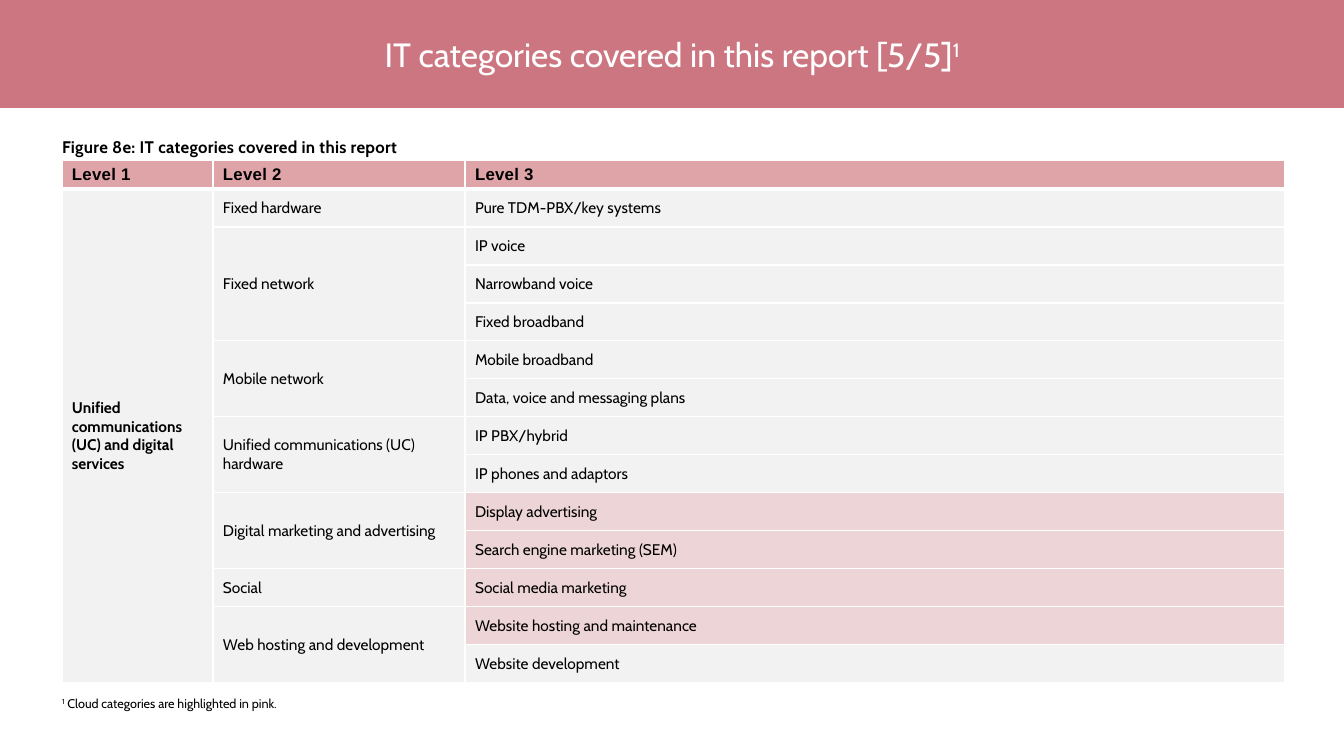
from lxml import etree
from pptx import Presentation
from pptx.dml.color import RGBColor
from pptx.enum.text import MSO_ANCHOR, MSO_AUTO_SIZE, PP_ALIGN
from pptx.oxml.ns import qn
from pptx.util import Inches, Pt

PX = 914400 / 100.8
MIDDLE, TOP = MSO_ANCHOR.MIDDLE, MSO_ANCHOR.TOP
LEFT, CENTER = PP_ALIGN.LEFT, PP_ALIGN.CENTER
NO_FIT = MSO_AUTO_SIZE.NONE

BLACK = RGBColor(0x00, 0x00, 0x00)
WHITE = RGBColor(0xFF, 0xFF, 0xFF)
ROSE = RGBColor(0xCC, 0x76, 0x81)
HEADER_PINK = RGBColor(0xDE, 0xA4, 0xA8)
CLOUD_PINK = RGBColor(0xED, 0xD4, 0xD6)
GREY = RGBColor(0xF2, 0xF2, 0xF2)

COLUMNS = (151, 252, 819)
HEADER_HEIGHT, ROW_HEIGHT = 29, 38
HEADINGS = ("Level 1", "Level 2", "Level 3")
LEVEL_1 = "Unified communications (UC) and digital services"
CATEGORIES = (
    ("Fixed hardware", ("Pure TDM-PBX/key systems",)),
    ("Fixed network", ("IP voice", "Narrowband voice", "Fixed broadband")),
    ("Mobile network", ("Mobile broadband", "Data, voice and messaging plans")),
    ("Unified communications (UC) hardware",
     ("IP PBX/hybrid", "IP phones and adaptors")),
    ("Digital marketing and advertising",
     ("Display advertising", "Search engine marketing (SEM)")),
    ("Social", ("Social media marketing",)),
    ("Web hosting and development",
     ("Website hosting and maintenance", "Website development")),
)
CLOUD = {"Display advertising", "Search engine marketing (SEM)",
         "Social media marketing", "Website hosting and maintenance"}


def px(length):
    return round(length * PX)


def write(para, text, size=11, font="Cabin", color=BLACK, bold=False,
          spacing=0, raised=False):
    span = para.add_run()
    span.text = text
    span.font.size = Pt(size)
    span.font.name = font
    span.font.color.rgb = color
    span.font.bold = bold
    properties = span.font._element
    if spacing:
        properties.set("spc", str(spacing))
    if raised:
        properties.set("baseline", "30000")


def place(holder, box, anchor=TOP, align=LEFT, side=0, after=0):
    holder.left, holder.top, holder.width, holder.height = map(px, box)
    frame = holder.text_frame
    frame.word_wrap = True
    frame.auto_size = NO_FIT
    frame.vertical_anchor = anchor
    frame.margin_left = frame.margin_right = px(side)
    frame.margin_top = frame.margin_bottom = px(5)
    para = frame.paragraphs[0]
    para.alignment = align
    para.space_before = Pt(0)
    para.space_after = Pt(after)
    return para


def add_banner(holder, box):
    holder.fill.solid()
    holder.fill.fore_color.rgb = ROSE
    para = place(holder, box, anchor=MIDDLE, align=CENTER, side=10)
    write(para, "IT categories covered in this report [5/5]", size=24, color=WHITE)
    write(para, "1", size=24, color=WHITE, raised=True)


def add_caption(holder, box):
    para = place(holder, box, after=8)
    write(para, "Figure 8e: IT categories covered in this report",
          size=12, bold=True, spacing=20)


def add_footnote(holder, box):
    para = place(holder, box, after=8)
    write(para, "1", size=9, raised=True)
    write(para, " Cloud categories are highlighted in pink.", size=9)


def style_cell(cell, fill, top=1, bottom=1):
    cell.margin_top = cell.margin_bottom = px(4)
    cell.margin_left = cell.margin_right = px(10)
    cell.vertical_anchor = MIDDLE
    cell.fill.solid()
    cell.fill.fore_color.rgb = fill
    properties = cell._tc.get_or_add_tcPr()
    widths = (("lnL", 1), ("lnR", 1), ("lnT", top), ("lnB", bottom))
    for index, (side, width) in enumerate(widths):
        line = etree.Element(qn(f"a:{side}"), w=str(Pt(width)))
        paint = etree.SubElement(line, qn("a:solidFill"))
        etree.SubElement(paint, qn("a:srgbClr"), val=str(WHITE))
        properties.insert(index, line)


def fill_cell(cell, text, **style):
    write(cell.text_frame.paragraphs[0], text, **style)


def add_categories(page, box):
    count = sum(len(items) for _, items in CATEGORIES)
    table = page.shapes.add_table(count + 1, len(COLUMNS), *map(px, box)).table
    table.horz_banding = False
    for column, width in zip(table.columns, COLUMNS):
        column.width = px(width)
    for index, row in enumerate(table.rows):
        row.height = px(ROW_HEIGHT if index else HEADER_HEIGHT)
    for index, heading in enumerate(HEADINGS):
        cell = table.cell(0, index)
        style_cell(cell, HEADER_PINK, bottom=3)
        fill_cell(cell, heading, size=12, font="Arial", bold=True, spacing=20)

    first = 1
    for level_2, items in CATEGORIES:
        for index, level_3 in enumerate(items, first):
            fills = (GREY, GREY, CLOUD_PINK if level_3 in CLOUD else GREY)
            for column, fill in enumerate(fills):
                style_cell(table.cell(index, column), fill, top=3 if index == 1 else 1)
            fill_cell(table.cell(index, 2), level_3)
        last = first + len(items) - 1
        fill_cell(table.cell(first, 1), level_2)
        if last > first:
            table.cell(first, 1).merge(table.cell(last, 1))
        first = last + 1
    fill_cell(table.cell(1, 0), LEVEL_1, bold=True)
    table.cell(1, 0).merge(table.cell(count, 0))


def add_category_page(deck, box):
    left, top, width, _ = box
    page = deck.slides.add_slide(deck.slide_layouts.get_by_name("Comparison"))
    holders = {holder.placeholder_format.idx: holder for holder in page.placeholders}
    for index in (2, 4):
        unused = holders[index]._element
        unused.getparent().remove(unused)
    add_banner(holders[0], (left, top, width, 108))
    add_caption(holders[1], (left + 62, top + 132, 1220, 28))
    table_height = HEADER_HEIGHT + 13 * ROW_HEIGHT
    add_categories(page, (left + 62, top + 160, sum(COLUMNS), table_height))
    add_footnote(holders[3], (left + 62, top + 691, 855, 55))


def main():
    deck = Presentation()
    deck.slide_width = Inches(13.33)
    deck.slide_height = Inches(7.5)
    add_category_page(deck, (0, 0, 1344, 756))
    deck.save("out.pptx")


if __name__ == "__main__":
    main()
